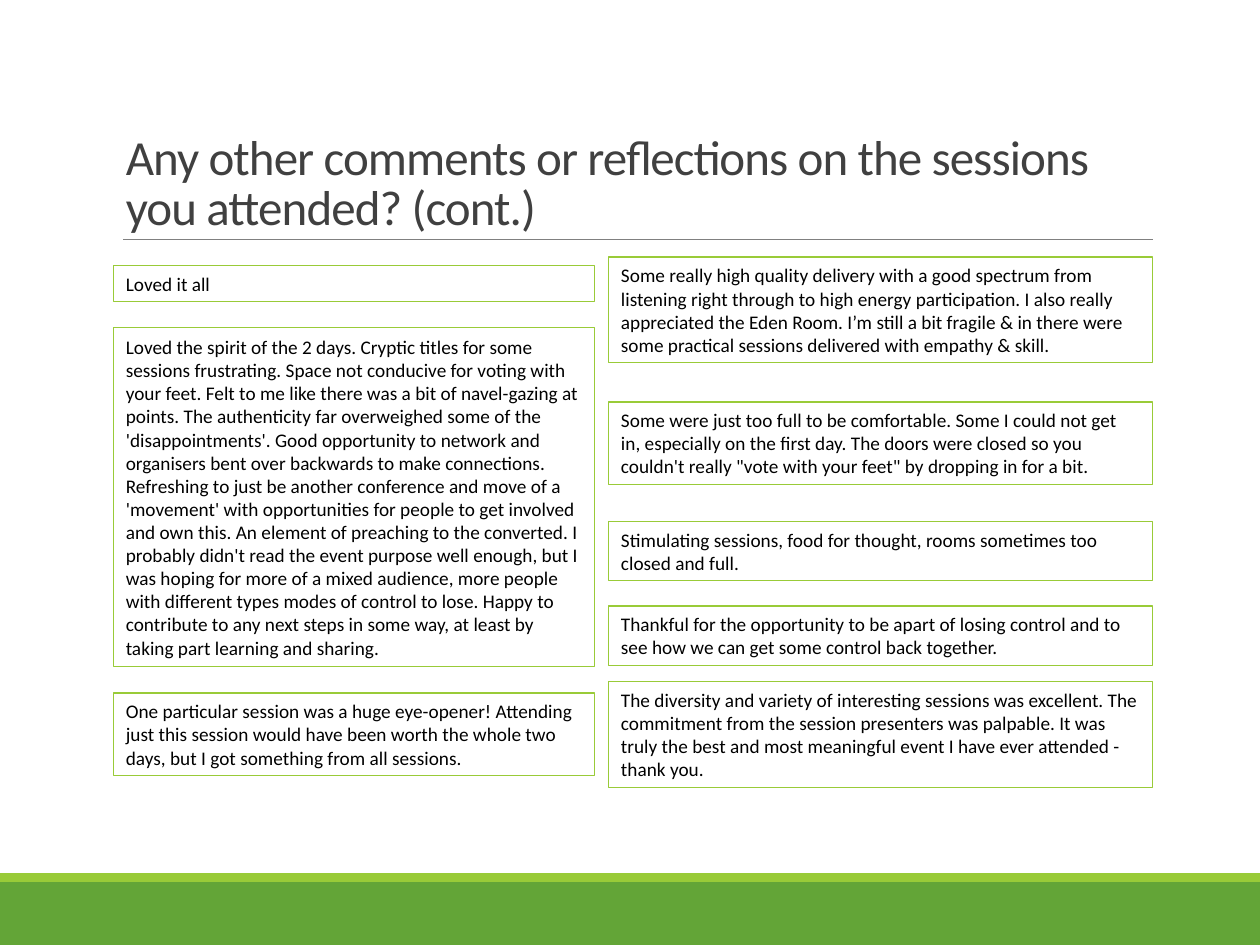
from lxml import etree
from pptx import Presentation
from pptx.dml.color import RGBColor
from pptx.enum.shapes import MSO_CONNECTOR, MSO_SHAPE
from pptx.enum.text import MSO_ANCHOR, MSO_AUTO_SIZE, PP_ALIGN
from pptx.oxml.ns import qn
from pptx.util import Inches, Pt

RECT = MSO_SHAPE.RECTANGLE
LINE = MSO_CONNECTOR.STRAIGHT
BOTTOM = MSO_ANCHOR.BOTTOM
MIDDLE = MSO_ANCHOR.MIDDLE
GROW = MSO_AUTO_SIZE.SHAPE_TO_FIT_TEXT
LEFT = PP_ALIGN.LEFT

FONT = "Calibri"
COLORS = {
    "green": "63A537",
    "lime": "99CB38",
    "rule": "808080",
    "title": "404040",
    "text": "000000",
}
PAD = 0.1
PITCH = 0.185

TITLE = "Any other comments or reflections on the sessions you attended? (cont.)"

LEFT_NOTES = [
    (2.11, 1, "Loved it all"),
    (2.6, 14, "Loved the spirit of the 2 days. Cryptic titles for some sessions "
     "frustrating. Space not conducive for voting with your feet. Felt to me like "
     "there was a bit of navel-gazing at points. The authenticity far overweighed "
     "some of the 'disappointments'. Good opportunity to network and organisers bent "
     "over backwards to make connections. Refreshing to just be another conference "
     "and move of a 'movement' with opportunities for people to get involved and own "
     "this. An element of preaching to the converted. I probably didn't read the "
     "event purpose well enough, but I was hoping for more of a mixed audience, more "
     "people with different types modes of control to lose. Happy to contribute to "
     "any next steps in some way, at least by taking part learning and sharing."),
    (5.5, 3, "One particular session was a huge eye-opener! Attending just this "
     "session would have been worth the whole two days, but I got something from all "
     "sessions."),
]
RIGHT_NOTES = [
    (2.04, 4, "Some really high quality delivery with a good spectrum from listening "
     "right through to high energy participation. I also really appreciated the Eden "
     "Room. I’m still a bit fragile & in there were some practical sessions delivered "
     "with empathy & skill."),
    (3.19, 3, "Some were just too full to be comfortable. Some I could not get in, "
     "especially on the first day. The doors were closed so you couldn't really "
     '"vote with your feet" by dropping in for a bit.'),
    (4.14, 2, "Stimulating sessions, food for thought, rooms sometimes too closed "
     "and full."),
    (4.81, 2, "Thankful for the opportunity to be apart of losing control and to see "
     "how we can get some control back together."),
    (5.41, 4, "The diversity and variety of interesting sessions was excellent. The "
     "commitment from the session presenters was palpable. It was truly the best and "
     "most meaningful event I have ever attended - thank you."),
]


def color(name):
    return RGBColor.from_string(COLORS[name])


def add_run(para, text, size, name):
    run = para.add_run()
    run.text = text
    run.font.name = FONT
    run.font.size = Pt(size)
    run.font.color.rgb = color(name)
    return run


def add_rect(slide, left, top, width, height):
    shape = slide.shapes.add_shape(
        RECT, Inches(left), Inches(top), Inches(width), Inches(height))
    shape.shadow.inherit = False
    return shape


def add_band(slide, left, top, width, height, name):
    band = add_rect(slide, left, top, width, height)
    band.fill.solid()
    band.fill.fore_color.rgb = color(name)
    band.line.fill.background()


def add_footer(slide, left, top, width, height):
    edge = 0.07
    add_band(slide, left, top + edge, width, height - edge, "green")
    add_band(slide, left, top, width, edge, "lime")


def add_title(slide, left, top, width, height):
    base = Inches(top + height - 0.02)
    rule = slide.shapes.add_connector(
        LINE, Inches(left + 0.08), base, Inches(left + width), base)
    rule.line.color.rgb = color("rule")
    rule.line.width = Pt(0.5)
    etree.SubElement(rule._element.spPr, qn("a:effectLst"))

    box = slide.shapes.add_textbox(
        Inches(left), Inches(top), Inches(width), Inches(height))
    frame = box.text_frame
    frame.word_wrap = True
    frame.vertical_anchor = BOTTOM
    para = frame.paragraphs[0]
    para.line_spacing = 0.85
    run = add_run(para, TITLE, 28, "title")
    run.font._element.set("spc", "-50")


def add_notes(slide, left, width, notes):
    for top, lines, text in notes:
        note = add_rect(slide, left, top, width, PAD + lines * PITCH)
        note.fill.background()
        note.line.color.rgb = color("lime")
        note.line.width = Pt(0.75)
        frame = note.text_frame
        frame.word_wrap = True
        frame.auto_size = GROW
        frame.vertical_anchor = MIDDLE
        para = frame.paragraphs[0]
        para.alignment = LEFT
        add_run(para, text, 11, "text")


def main():
    deck = Presentation()
    deck.slide_width = Inches(10)
    deck.slide_height = Inches(7.5)
    slide = deck.slides.add_slide(deck.slide_layouts[6])
    add_footer(slide, 0, 6.93, 10, 0.57)
    add_title(slide, 0.9, 0.33, 8.25, 1.59)
    add_notes(slide, 0.9, 3.82, LEFT_NOTES)
    add_notes(slide, 4.83, 4.32, RIGHT_NOTES)
    deck.save("out.pptx")


if __name__ == "__main__":
    main()
